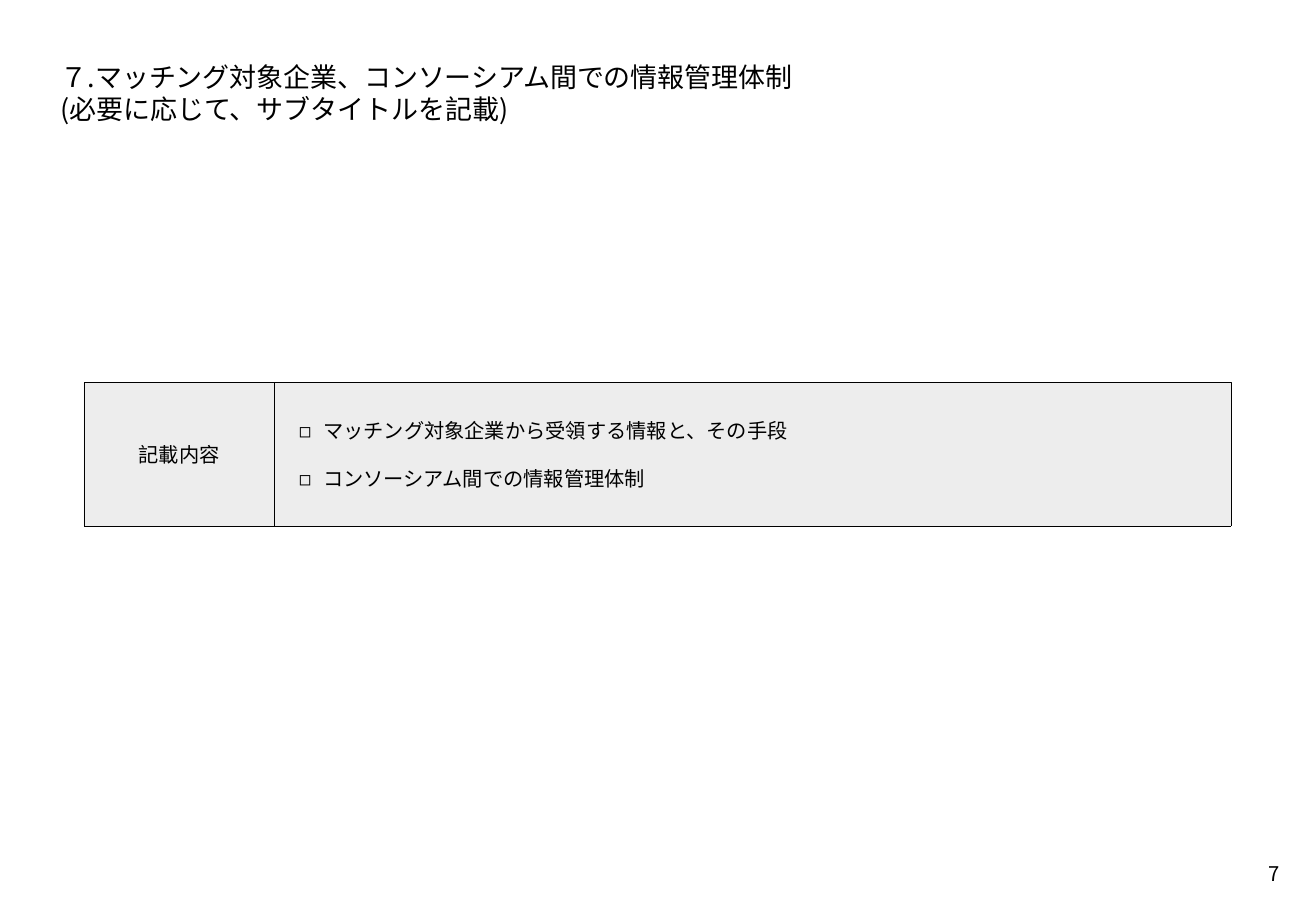
from lxml import etree
from pptx import Presentation
from pptx.dml.color import RGBColor
from pptx.enum import dml, shapes, text
from pptx.oxml import ns
from pptx.util import Inches, Pt

BLACK = RGBColor(0x00, 0x00, 0x00)
GREY = RGBColor(0xED, 0xED, 0xED)
FONT = "Noto Sans CJK JP"
LEFT, CENTER, RIGHT = text.PP_ALIGN.LEFT, text.PP_ALIGN.CENTER, text.PP_ALIGN.RIGHT
TOP, MIDDLE = text.MSO_ANCHOR.TOP, text.MSO_ANCHOR.MIDDLE


def add_run(para, words, size):
    run = para.add_run()
    run.text = words
    run.font.size = Pt(size)
    run.font.name = FONT
    run.font.color.rgb = BLACK
    east = etree.SubElement(run.font._element, ns.qn("a:ea"))
    east.set("typeface", FONT)


def set_frame(shape, inset, anchor, align, pitch):
    """Set margins and anchor, and return the first paragraph."""
    frame = shape.text_frame
    frame.word_wrap = True
    frame.auto_size = text.MSO_AUTO_SIZE.NONE
    frame.vertical_anchor = anchor
    frame.margin_left = frame.margin_right = Inches(inset)
    frame.margin_top = frame.margin_bottom = Inches(inset)
    para = frame.paragraphs[0]
    para.alignment = align
    para.line_spacing = Pt(pitch)
    return para


deck = Presentation()
deck.slide_width, deck.slide_height = Inches(10.83), Inches(7.5)
slide = deck.slides.add_slide(deck.slide_layouts[5])

# Title
title = slide.shapes.title
title.left, title.top = Inches(0.3), Inches(0.3)
title.width, title.height = Inches(10.24), Inches(0.79)
para = set_frame(title, 0.2, TOP, LEFT, 19)
add_run(para, "７.マッチング対象企業、コンソーシアム間での情報管理体制", 16)
para.add_line_break()
add_run(para, "(必要に応じて、サブタイトルを記載)", 16)

# Page number
page = slide.shapes.add_textbox(Inches(10.24), Inches(6.99), Inches(0.39), Inches(0.39))
add_run(set_frame(page, 0.1, TOP, RIGHT, 14.2), "7", 12)

# Content panel: label on the left, checklist on the right
panel = slide.shapes.add_group_shape()
cells = []
for left, width in ((2.26, 7.87), (0.69, 1.57)):
    cell = panel.shapes.add_shape(
        shapes.MSO_SHAPE.RECTANGLE, Inches(left), Inches(3.15), Inches(width), Inches(1.18)
    )
    cell.shadow.inherit = False
    cell.fill.solid()
    cell.fill.fore_color.rgb = GREY
    cell.line.color.rgb = BLACK
    cell.line.width = Pt(0.25)
    cell.line.dash_style = dml.MSO_LINE.ROUND_DOT
    cells.append(cell)
body, label = cells

add_run(set_frame(label, 0.1, MIDDLE, CENTER, 14.2), "記載内容", 12)

items = ["マッチング対象企業から受領する情報と、その手段", "コンソーシアム間での情報管理体制"]
para = set_frame(body, 0.2, MIDDLE, LEFT, 14.2)
for i, item in enumerate(items):
    if i:
        para = body.text_frame.add_paragraph()
        para.alignment = LEFT
        para.line_spacing = para.space_before = Pt(14.2)
    props = para._p.get_or_add_pPr()
    props.set("marL", str(Inches(0.2)))
    props.set("indent", str(Inches(-0.2)))
    etree.SubElement(props, ns.qn("a:buFont")).set("typeface", FONT)
    etree.SubElement(props, ns.qn("a:buChar")).set("char", "◻")
    add_run(para, item, 12)

deck.save("out.pptx")
